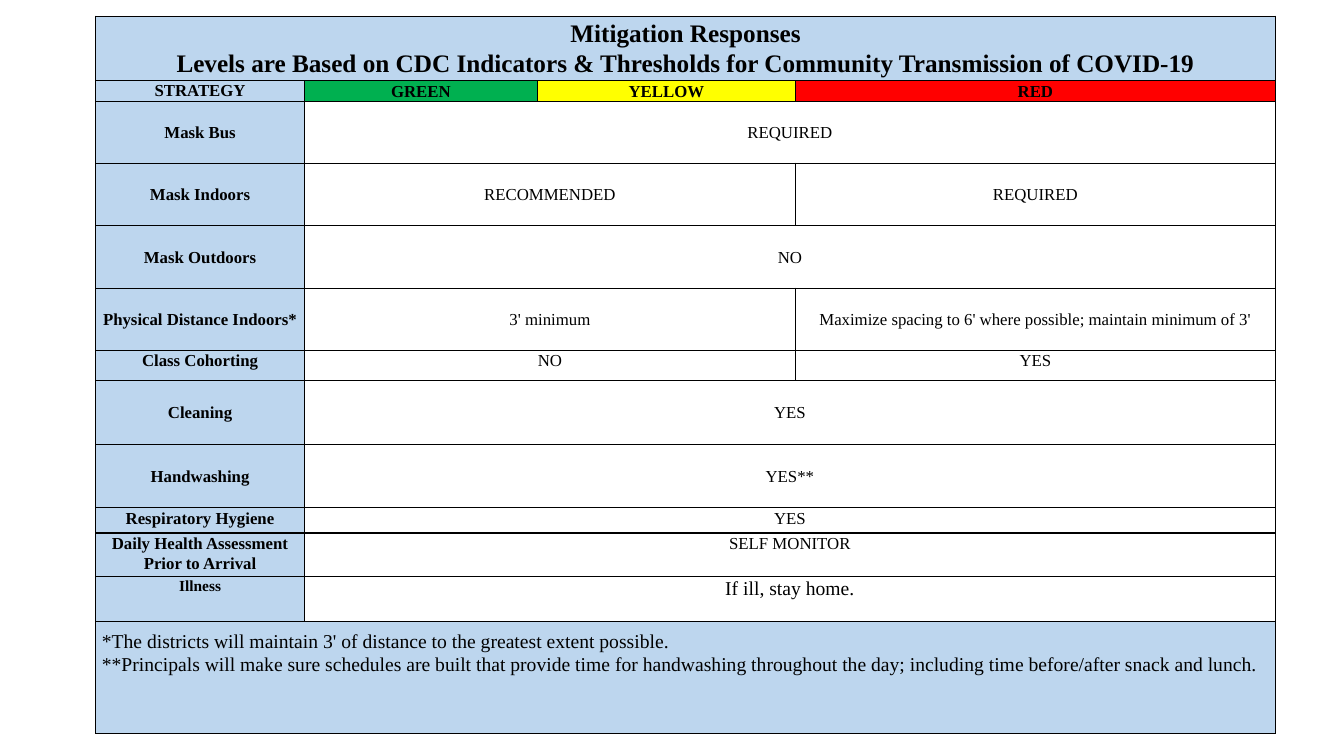
from dataclasses import dataclass

from lxml import etree
from pptx import Presentation
from pptx.dml.color import RGBColor
from pptx.enum.text import MSO_ANCHOR, PP_ALIGN
from pptx.oxml.ns import qn
from pptx.table import Table, _Cell
from pptx.util import Inches, Pt

TOP, MIDDLE = MSO_ANCHOR.TOP, MSO_ANCHOR.MIDDLE
CENTER, JUSTIFY = PP_ALIGN.CENTER, PP_ALIGN.JUSTIFY

FONT = "Times New Roman"
BLACK, BLUE = "000000", "BDD6EE"
GREEN, YELLOW, RED = "00B050", "FFFF00", "FF0000"
COLUMN_WIDTHS = (2.07, 2.31, 2.56, 4.76)


@dataclass(frozen=True)
class Entry:
    text: str
    span: int = 1
    fill: str | None = None
    size: int = 12
    bold: bool = False
    anchor: MSO_ANCHOR = MIDDLE
    align: PP_ALIGN = CENTER
    top_inset: float = 0


@dataclass(frozen=True)
class Row:
    height: float
    entries: tuple[Entry, ...]


def strategy(height: float, name: str, *responses: tuple[str, int],
             anchor: MSO_ANCHOR = MIDDLE, name_size: int = 12, size: int = 12) -> Row:
    """A strategy name followed by (response, columns spanned) pairs."""
    heading = Entry(name, fill=BLUE, size=name_size, bold=True, anchor=anchor)
    return Row(height, (heading, *(Entry(text, span, size=size, anchor=anchor)
                                   for text, span in responses)))


ROWS = (
    Row(0.64, (Entry("Mitigation Responses\nLevels are Based on CDC Indicators & Thresholds "
                     "for Community Transmission of COVID-19", 4, BLUE, 18, True),)),
    Row(0.21, (Entry("STRATEGY", fill=BLUE, bold=True, anchor=TOP),
               Entry("GREEN", fill=GREEN, bold=True),
               Entry("YELLOW", fill=YELLOW, bold=True),
               Entry("RED", fill=RED, bold=True))),
    strategy(0.61, "Mask Bus", ("REQUIRED", 3)),
    strategy(0.62, "Mask Indoors", ("RECOMMENDED", 2), ("REQUIRED", 1)),
    strategy(0.62, "Mask Outdoors", ("NO", 3)),
    strategy(0.62, "Physical Distance Indoors*", ("3' minimum", 2),
             ("Maximize spacing to 6' where possible; maintain minimum of 3'", 1)),
    strategy(0.3, "Class Cohorting", ("NO", 2), ("YES", 1), anchor=TOP),
    strategy(0.63, "Cleaning", ("YES", 3)),
    strategy(0.63, "Handwashing", ("YES**", 3)),
    strategy(0.25, "Respiratory Hygiene", ("YES", 3), anchor=TOP),
    strategy(0.43, "Daily Health Assessment Prior to Arrival", ("SELF MONITOR", 3), anchor=TOP),
    strategy(0.45, "Illness", ("If ill, stay home.", 3), anchor=TOP, name_size=11, size=14),
    Row(1.11, (Entry("*The districts will maintain 3' of distance to the greatest extent possible.\n"
                     "**Principals will make sure schedules are built that provide time for "
                     "handwashing throughout the day; including time before/after snack and lunch.",
                     4, BLUE, 14, anchor=TOP, align=JUSTIFY, top_inset=0.08),)),
)


def rgb(color: str) -> RGBColor:
    return RGBColor.from_string(color)


def draw_borders(cell: _Cell) -> None:
    properties = cell._tc.get_or_add_tcPr()
    for position, side in enumerate(("a:lnL", "a:lnR", "a:lnT", "a:lnB")):
        line = etree.Element(qn(side), w=str(Pt(1)))
        fill = etree.SubElement(line, qn("a:solidFill"))
        etree.SubElement(fill, qn("a:srgbClr"), val=BLACK)
        properties.insert(position, line)


def write_entry(cell: _Cell, entry: Entry) -> None:
    cell.margin_left = cell.margin_right = Inches(0.06)
    cell.margin_top, cell.margin_bottom = Inches(entry.top_inset), 0
    cell.vertical_anchor = entry.anchor
    frame = cell.text_frame
    for index, text in enumerate(entry.text.split("\n")):
        paragraph = frame.add_paragraph() if index else frame.paragraphs[0]
        paragraph.alignment = entry.align
        paragraph.line_spacing = 1.07
        run = paragraph.add_run()
        run.text = text
        run.font.name = FONT
        run.font.size = Pt(entry.size)
        run.font.bold = entry.bold
        run.font.color.rgb = rgb(BLACK)


def fill_row(table: Table, row_index: int, row: Row) -> None:
    table.rows[row_index].height = Inches(row.height)
    column = 0
    for entry in row.entries:
        last = column + entry.span - 1
        for covered in range(column, last + 1):
            cell = table.cell(row_index, covered)
            if entry.fill:
                cell.fill.solid()
                cell.fill.fore_color.rgb = rgb(entry.fill)
            else:
                cell.fill.background()
            draw_borders(cell)
        first_cell = table.cell(row_index, column)
        if entry.span > 1:
            first_cell.merge(table.cell(row_index, last))
        write_entry(first_cell, entry)
        column = last + 1


def main() -> None:
    presentation = Presentation()
    presentation.slide_width, presentation.slide_height = Inches(13.33), Inches(7.5)
    slide = presentation.slides.add_slide(presentation.slide_layouts[6])
    table = slide.shapes.add_table(
        len(ROWS), len(COLUMN_WIDTHS), Inches(0.95), Inches(0.16),
        Inches(sum(COLUMN_WIDTHS)), Inches(sum(row.height for row in ROWS))).table
    table.first_row = table.horz_banding = False
    for column, width in zip(table.columns, COLUMN_WIDTHS):
        column.width = Inches(width)
    for index, row in enumerate(ROWS):
        fill_row(table, index, row)
    presentation.save("out.pptx")


if __name__ == "__main__":
    main()
